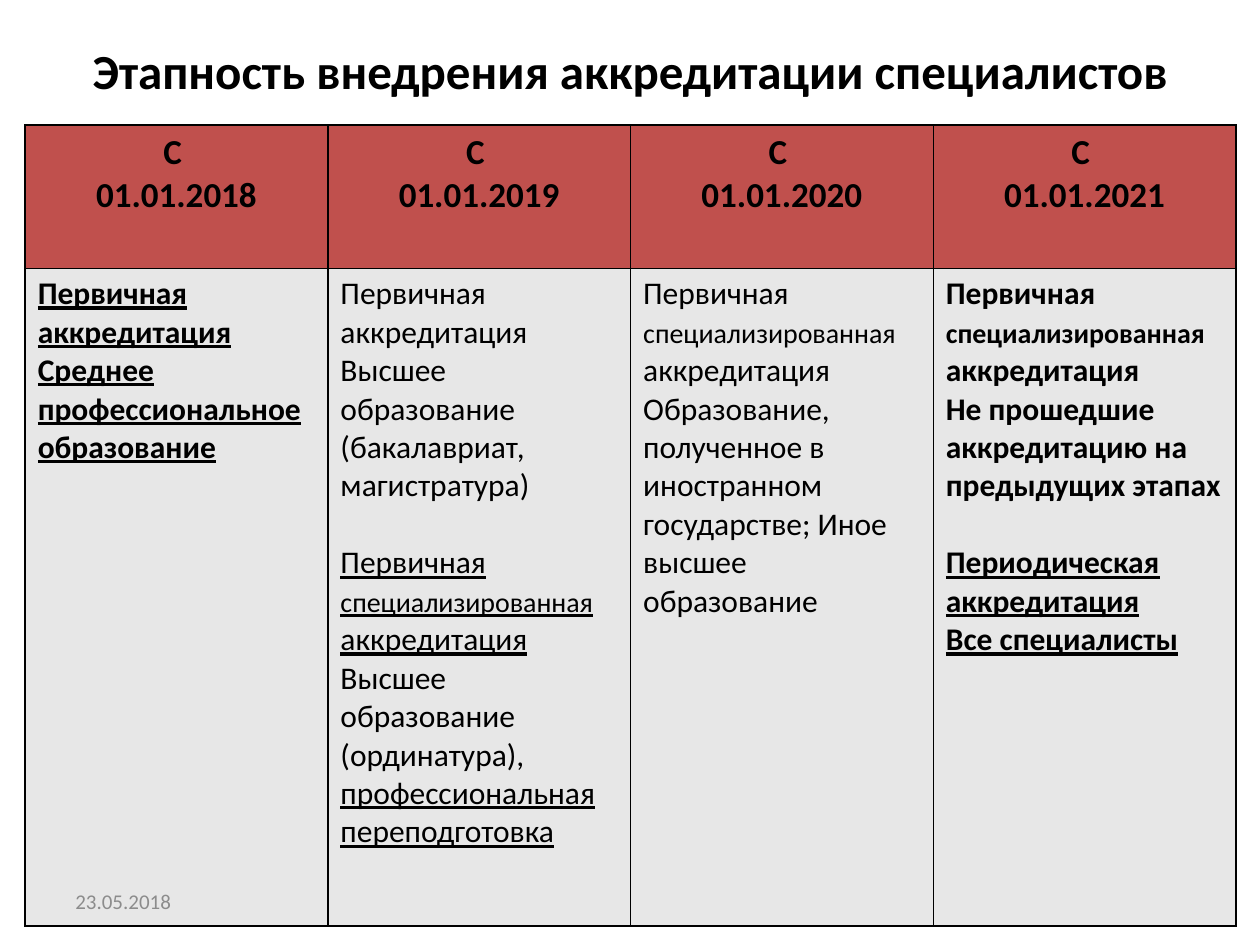
from pptx import Presentation
from pptx.dml.color import RGBColor
from pptx.enum.text import MSO_ANCHOR, PP_ALIGN
from pptx.oxml import parse_xml
from pptx.oxml.ns import nsdecls
from pptx.util import Inches, Pt

FONT = "Calibri"
BLACK = RGBColor(0x00, 0x00, 0x00)
GRAY = RGBColor(0x8C, 0x8C, 0x8C)
RED = RGBColor(0xC0, 0x50, 0x4D)
LIGHT = RGBColor(0xE7, 0xE7, 0xE7)

YEARS = (2018, 2019, 2020, 2021)
GAP = 22  # one text line between the stages of a column


def specialized(underline=False):
    """Runs of the stage name, with its long middle word set smaller."""
    return [("Первичная ", 18, underline),
            ("специализированная", 16, underline),
            (" аккредитация", 18, underline)]


# Each column: bold, then paragraphs as (space before, runs of text, size, underline)
STAGES = [
    (True, [
        (0, [("Первичная аккредитация", 18, True)]),
        (0, [("Среднее профессиональное образование", 18, True)]),
    ]),
    (False, [
        (0, [("Первичная аккредитация", 18, False)]),
        (0, [("Высшее образование (бакалавриат, магистратура)", 18, False)]),
        (GAP, specialized(underline=True)),
        (0, [("Высшее образование (ординатура), ", 18, False),
             ("профессиональная переподготовка", 18, True)]),
    ]),
    (False, [
        (0, specialized()),
        (0, [("Образование, полученное в иностранном государстве; "
              "Иное высшее образование", 18, False)]),
    ]),
    (True, [
        (0, specialized()),
        (0, [("Не прошедшие аккредитацию на предыдущих этапах", 18, False)]),
        (GAP, [("Периодическая аккредитация", 18, True)]),
        (0, [("Все специалисты", 18, True)]),
    ]),
]


def style_font(font, size, color=BLACK, bold=False, underline=False):
    font.name = FONT
    font.size = Pt(size)
    font.color.rgb = color
    font.bold = bold
    font.underline = underline


def add_text(slide, box, text, size, color, bold, alignment):
    text_frame = slide.shapes.add_textbox(*box).text_frame
    text_frame.word_wrap = True
    text_frame.vertical_anchor = MSO_ANCHOR.MIDDLE
    text_frame.text = text
    paragraph = text_frame.paragraphs[0]
    paragraph.alignment = alignment
    style_font(paragraph.runs[0].font, size, color, bold)


def style_cell(cell, color):
    # Borders come before the fill in the cell properties
    properties = cell._tc.get_or_add_tcPr()
    for side in ("lnL", "lnR", "lnT", "lnB"):
        properties.append(parse_xml(
            f'<a:{side} {nsdecls("a")} w="{Pt(1)}"><a:solidFill>'
            f'<a:srgbClr val="{BLACK}"/></a:solidFill></a:{side}>'))
    cell.fill.solid()
    cell.fill.fore_color.rgb = color


def fill_header(cell, year):
    style_cell(cell, RED)
    cell.text_frame.text = f"С \n01.01.{year}"
    for paragraph in cell.text_frame.paragraphs:
        paragraph.alignment = PP_ALIGN.CENTER
        style_font(paragraph.runs[0].font, 20, bold=True)


def fill_stage(cell, bold, paragraphs):
    style_cell(cell, LIGHT)
    text_frame = cell.text_frame
    for index, (space, runs) in enumerate(paragraphs):
        paragraph = text_frame.add_paragraph() if index else text_frame.paragraphs[0]
        if space:
            paragraph.space_before = Pt(space)
        for text, size, underline in runs:
            run = paragraph.add_run()
            run.text = text
            style_font(run.font, size, bold=bold, underline=underline)


def add_stage_table(slide, left, top, width, height):
    header_height = Inches(1.14)
    table = slide.shapes.add_table(2, len(YEARS), left, top, width, height).table
    table.rows[0].height = header_height
    table.rows[1].height = height - header_height
    for column, (year, (bold, paragraphs)) in enumerate(zip(YEARS, STAGES)):
        fill_header(table.cell(0, column), year)
        fill_stage(table.cell(1, column), bold, paragraphs)


def main():
    presentation = Presentation()
    presentation.slide_width = Inches(10)
    presentation.slide_height = Inches(7.5)
    slide = presentation.slides.add_slide(presentation.slide_layouts[6])

    # Title
    add_text(slide, (Inches(0.5), Inches(0.21), Inches(9), Inches(0.69)),
             "Этапность внедрения аккредитации специалистов",
             28, BLACK, True, PP_ALIGN.CENTER)
    # Stages by year
    add_stage_table(slide, Inches(0.2), Inches(0.99), Inches(9.61), Inches(6.36))
    # Date
    add_text(slide, (Inches(0.5), Inches(6.95), Inches(2.33), Inches(0.4)),
             "23.05.2018", 12, GRAY, False, PP_ALIGN.LEFT)

    presentation.save("out.pptx")


if __name__ == "__main__":
    main()
